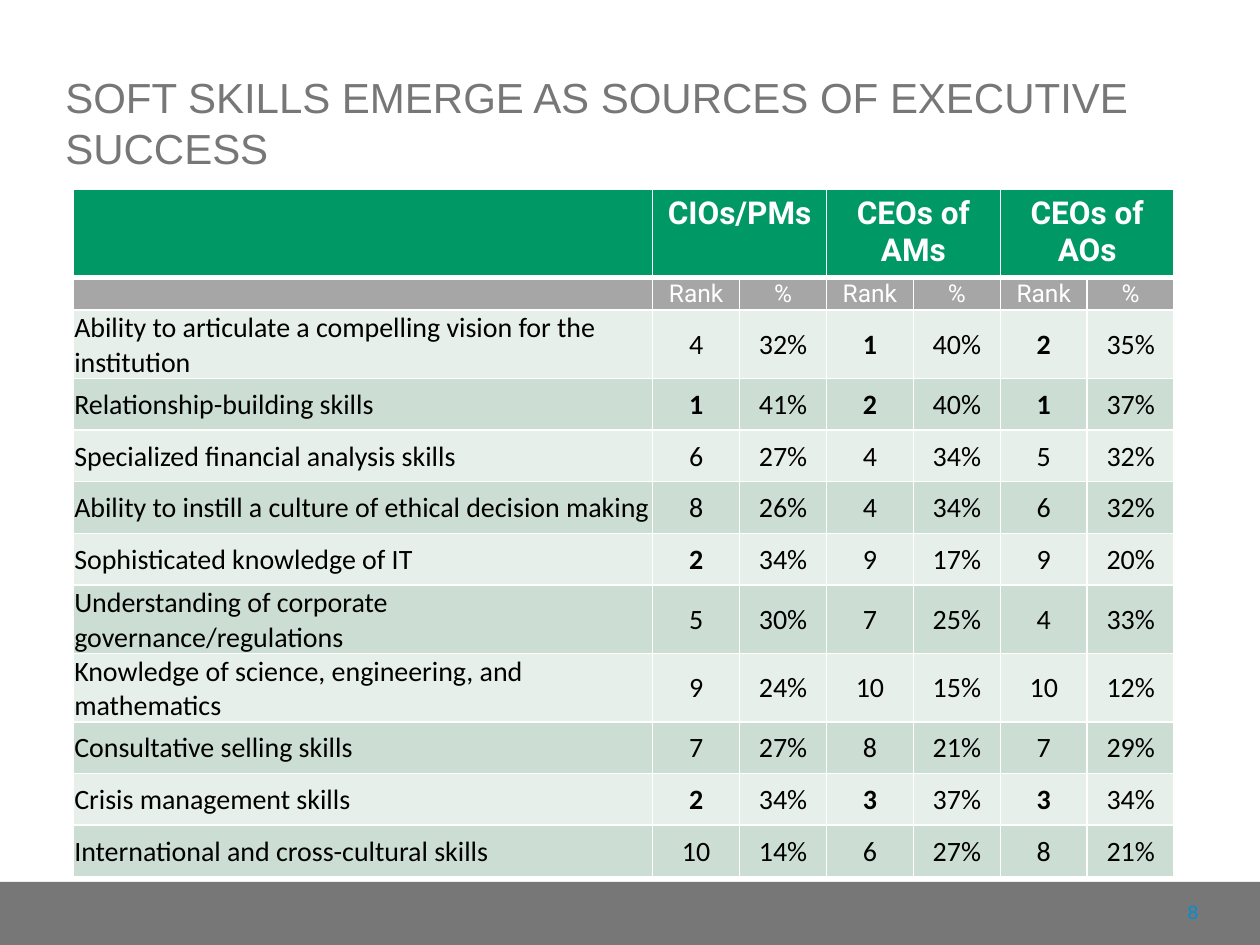
import lxml.etree
import pptx
import pptx.dml.color
import pptx.enum.shapes
import pptx.enum.text
import pptx.oxml.ns
import pptx.util

Inches = pptx.util.Inches
ALIGN = pptx.enum.text.PP_ALIGN
ANCHOR = pptx.enum.text.MSO_ANCHOR

TITLE = "SOFT SKILLS EMERGE AS SOURCES OF EXECUTIVE SUCCESS"
PAGE_NUMBER = "8"
GROUPS = ["CIOs/PMs", "CEOs of AMs", "CEOs of AOs"]
MEASURES = ["Rank", "%"]
# Skill, then rank and percentage for each group
SKILLS = [
    ("Ability to articulate a compelling vision for the institution", 4, 32, 1, 40, 2, 35),
    ("Relationship-building skills", 1, 41, 2, 40, 1, 37),
    ("Specialized financial analysis skills", 6, 27, 4, 34, 5, 32),
    ("Ability to instill a culture of ethical decision making", 8, 26, 4, 34, 6, 32),
    ("Sophisticated knowledge of IT", 2, 34, 9, 17, 9, 20),
    ("Understanding of corporate governance/regulations", 5, 30, 7, 25, 4, 33),
    ("Knowledge of science, engineering, and mathematics", 9, 24, 10, 15, 10, 12),
    ("Consultative selling skills", 7, 27, 8, 21, 7, 29),
    ("Crisis management skills", 2, 34, 3, 37, 3, 34),
    ("International and cross-cultural skills", 10, 14, 6, 27, 8, 21),
]
TOP_RANK = 3  # ranks up to this one are bold

GREY, BLUE, WHITE, BLACK = "777777", "008ED6", "FFFFFF", "000000"
HEADER_FILL, MEASURE_FILL = "009966", "A6A6A6"
BAND_FILLS = ["E7EFEA", "CCDED3"]
SKILL_WIDTH, VALUE_WIDTH = 4.6, 0.69
HEADER_HEIGHT, MEASURE_HEIGHT, SKILL_HEIGHT = 0.41, 0.26, 0.41
HEADER_INSETS = (0, 0.05, 0, 0.05)
BODY_INSETS = (0.01, 0.01, 0.01, 0)


def rgb(value):
    return pptx.dml.color.RGBColor.from_string(value)


def write_text(frame, text, *, size, font, color, bold=False, align=ALIGN.LEFT):
    paragraph = frame.paragraphs[0]
    paragraph.alignment = align
    if not text:  # an empty cell still needs its size to keep the row low
        paragraph._p.get_or_add_endParaRPr().set("sz", str(size * 100))
        return
    run = paragraph.add_run()
    run.text = text
    run.font.size = pptx.util.Pt(size)
    run.font.name = font
    run.font.bold = bold
    run.font.color.rgb = rgb(color)


def add_text_box(slide, box, text, anchor, **text_format):
    frame = slide.shapes.add_textbox(*map(Inches, box)).text_frame
    frame.word_wrap = True
    frame.vertical_anchor = anchor
    write_text(frame, text, **text_format)


def set_borders(cell, **widths):
    """Draw white borders; widths maps L, R, T and B to points."""
    properties = cell._tc.get_or_add_tcPr()
    qn = pptx.oxml.ns.qn
    for side in "LRTB":
        width = pptx.util.Pt(widths.get(side, 1))
        line = lxml.etree.SubElement(properties, qn(f"a:ln{side}"), w=str(width))
        fill = lxml.etree.SubElement(line, qn("a:solidFill"))
        lxml.etree.SubElement(fill, qn("a:srgbClr"), val=WHITE)


def format_cell(cell, text, fill, insets, anchor, borders, **text_format):
    set_borders(cell, **borders)
    cell.fill.solid()
    cell.fill.fore_color.rgb = rgb(fill)
    cell.margin_left, cell.margin_top, cell.margin_right, cell.margin_bottom = map(Inches, insets)
    cell.vertical_anchor = anchor
    write_text(cell.text_frame, text, **text_format)


def add_skills_table(slide):
    value_count = len(GROUPS) * len(MEASURES)
    widths = [SKILL_WIDTH] + [VALUE_WIDTH] * value_count
    heights = [HEADER_HEIGHT, MEASURE_HEIGHT] + [SKILL_HEIGHT] * len(SKILLS)
    table = slide.shapes.add_table(
        len(heights), len(widths), Inches(0.58), Inches(1.5),
        Inches(sum(widths)), Inches(sum(heights))).table
    for column, width in zip(table.columns, widths):
        column.width = Inches(width)
    for row, height in zip(table.rows, heights):
        row.height = Inches(height)

    header = [""]
    for group in GROUPS:
        header += [group] + [""] * (len(MEASURES) - 1)
    for column, text in enumerate(header):
        format_cell(table.cell(0, column), text, HEADER_FILL, HEADER_INSETS, ANCHOR.TOP, {"B": 3},
                    size=18, font="Roboto", color=WHITE, bold=True, align=ALIGN.CENTER)
    for column in range(1, len(widths), len(MEASURES)):
        table.cell(0, column).merge(table.cell(0, column + len(MEASURES) - 1))

    for column, text in enumerate([""] + MEASURES * len(GROUPS)):
        format_cell(table.cell(1, column), text, MEASURE_FILL, BODY_INSETS, ANCHOR.MIDDLE, {"T": 3},
                    size=14, font="Roboto", color=WHITE, align=ALIGN.CENTER)

    for index, skill in enumerate(SKILLS):
        for column, value in enumerate(skill):
            is_rank = column % 2 == 1
            is_percent = column > 0 and not is_rank
            format_cell(table.cell(index + 2, column), f"{value}%" if is_percent else str(value),
                        BAND_FILLS[index % 2], BODY_INSETS, ANCHOR.MIDDLE, {},
                        size=16, font="Calibri", color=BLACK,
                        bold=is_rank and value <= TOP_RANK,
                        align=ALIGN.CENTER if column else ALIGN.LEFT)


def main():
    presentation = pptx.Presentation()
    presentation.slide_width, presentation.slide_height = Inches(10), Inches(7.5)
    slide = presentation.slides.add_slide(presentation.slide_layouts[6])

    footer = slide.shapes.add_shape(pptx.enum.shapes.MSO_SHAPE.RECTANGLE,
                                    Inches(0), Inches(7), Inches(10), Inches(0.5))
    footer.shadow.inherit = False
    footer.fill.solid()
    footer.fill.fore_color.rgb = rgb(GREY)
    footer.line.fill.background()

    add_text_box(slide, (0.42, 0.17, 9.16, 1.25), TITLE, ANCHOR.BOTTOM,
                 size=24, font="Arial", color=GREY)
    add_text_box(slide, (8.75, 7.04, 0.86, 0.4), PAGE_NUMBER, ANCHOR.MIDDLE,
                 size=11, font="Arial", color=BLUE, align=ALIGN.RIGHT)
    add_skills_table(slide)
    presentation.save("out.pptx")


if __name__ == "__main__":
    main()
